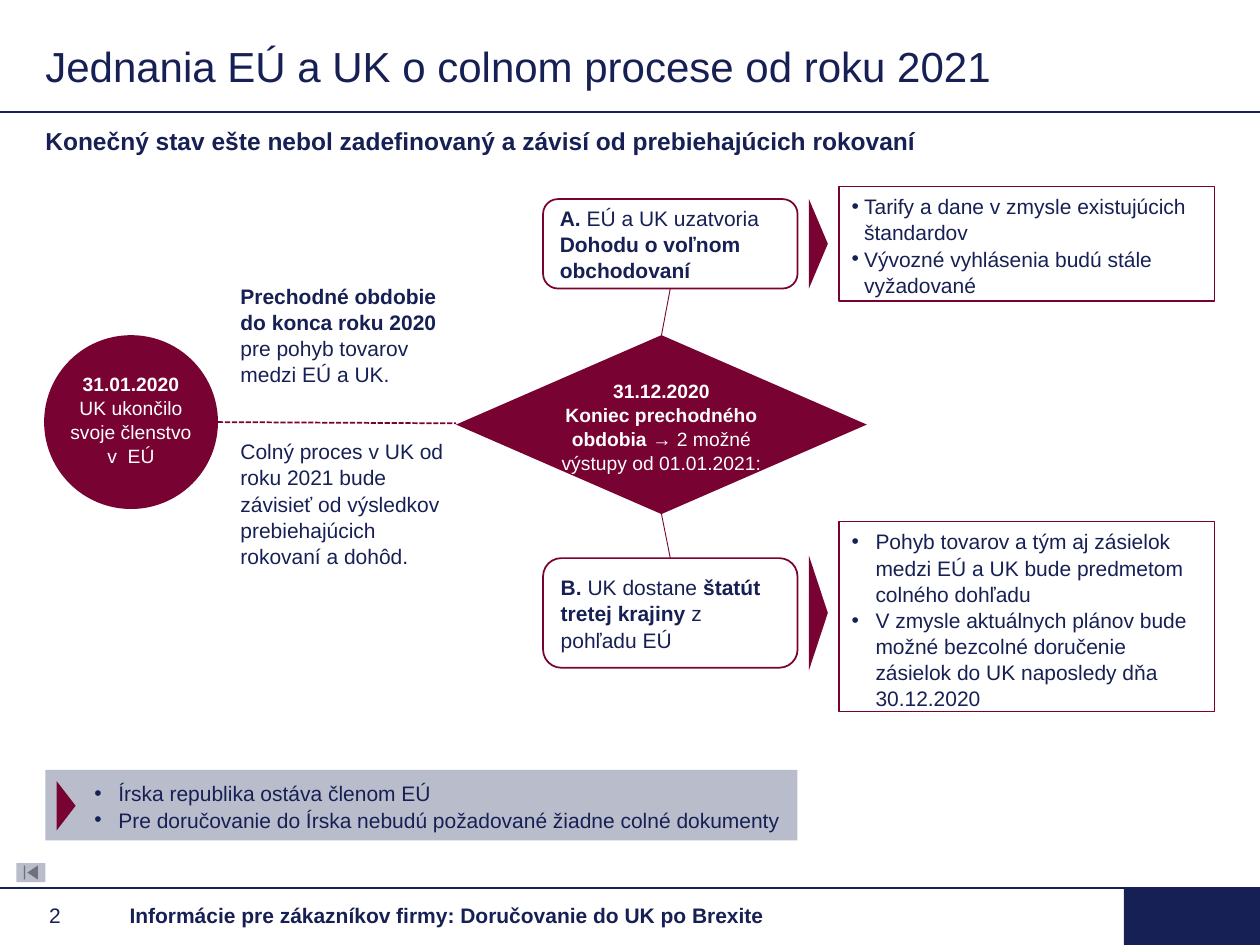
from pptx import Presentation
from pptx.dml.color import RGBColor
from pptx.enum.dml import MSO_LINE
from pptx.enum.shapes import MSO_CONNECTOR, MSO_SHAPE as Kind
from pptx.enum.text import MSO_ANCHOR as Anchor, PP_ALIGN as Align
from pptx.oxml.ns import qn
from pptx.util import Inches, Pt
from lxml.etree import SubElement

THEME = {
    "font": "Arial",
    "navy": RGBColor(0x17, 0x20, 0x54),
    "wine": RGBColor(0x78, 0x02, 0x32),
    "grey": RGBColor(0xB9, 0xBC, 0xCB),
    "white": RGBColor(0xFF, 0xFF, 0xFF),
    "title": Pt(24),
    "subtitle": Pt(14),
    "body": Pt(12),
    "node": Pt(11),
}

deck = Presentation()
deck.slide_width, deck.slide_height = Inches(10), Inches(7.5)
page = deck.slides.add_slide(deck.slide_layouts[6])


def draw(kind, place, fill=None, line=None, width=1, turn=0):
    shape = page.shapes.add_shape(kind, *map(Inches, place))
    shape.shadow.inherit = False
    shape.rotation = turn
    if fill:
        shape.fill.solid()
        shape.fill.fore_color.rgb = THEME[fill]
    else:
        shape.fill.background()
    if line:
        shape.line.color.rgb = THEME[line]
        shape.line.width = Pt(width)
    else:
        shape.line.fill.background()
    return shape


def write(shape, paras, size="body", color="navy", anchor=Anchor.TOP, align=Align.LEFT,
          insets=(0.1, 0.05, 0.1, 0.05), hang=0, gap=0):
    left, top, right, bottom = map(Inches, insets)
    frame_format = {
        "word_wrap": True, "vertical_anchor": anchor, "margin_left": left,
        "margin_top": top, "margin_right": right, "margin_bottom": bottom,
    }
    frame = shape.text_frame
    for name, value in frame_format.items():
        setattr(frame, name, value)
    for index, text in enumerate(paras):
        para = frame.add_paragraph() if index else frame.paragraphs[0]
        para.alignment = align
        para.line_spacing = 1.04
        if index and gap:
            para.space_before = Pt(gap)
        if hang:
            props = para._p.get_or_add_pPr()
            props.set("marL", str(Inches(hang)))
            props.set("indent", str(-Inches(hang)))
            SubElement(props, qn("a:buFont")).set("typeface", THEME["font"])
            SubElement(props, qn("a:buChar")).set("char", "•")
        for part, words in enumerate(text.split("*")):
            if not words:
                continue
            span = para.add_run()
            span.text = words
            span_format = {"name": THEME["font"], "size": THEME[size], "bold": part % 2 == 1}
            for name, value in span_format.items():
                setattr(span.font, name, value)
            span.font.color.rgb = THEME[color]


links = [
    ((0, 0.89), (10, 0.89), "navy", 1, None),
    ((0, 7.05), (10, 7.05), "navy", 1, None),
    ((5.32, 2.29), (5.25, 2.66), "wine", 0.5, None),
    ((5.25, 4.08), (5.32, 4.43), "wine", 0.5, None),
    ((1.73, 3.35), (3.62, 3.36), "wine", 1, MSO_LINE.SQUARE_DOT),
]
for start, end, color, width, dash in links:
    link = page.shapes.add_connector(MSO_CONNECTOR.STRAIGHT, *map(Inches, start + end))
    link.line.color.rgb = THEME[color]
    link.line.width = Pt(width)
    if dash:
        link.line.dash_style = dash
    SubElement(link._element.spPr, qn("a:effectLst"))

draw(Kind.RECTANGLE, (8.92, 7.05, 1.08, 0.45), "navy")

flush = (0, 0.05, 0.1, 0.05)
labels = [
    ((0.36, 0.28, 9.29, 0.47), ["Jednania EÚ a UK o colnom procese od roku 2021"],
     {"size": "title", "anchor": Anchor.MIDDLE, "insets": flush}),
    ((0.36, 0.94, 9.29, 0.25),
     ["*Konečný stav ešte nebol zadefinovaný a závisí od prebiehajúcich rokovaní*"],
     {"size": "subtitle", "insets": flush}),
    ((0.93, 7.13, 5.95, 0.25),
     ["*Informácie pre zákazníkov firmy: Doručovanie do UK po Brexite*"],
     {"anchor": Anchor.MIDDLE}),
    ((0.39, 7.13, 0.54, 0.25), ["2"], {"anchor": Anchor.MIDDLE, "insets": flush}),
    ((1.81, 2.19, 1.82, 2.32),
     ["*Prechodné obdobie do konca roku 2020* pre pohyb tovarov medzi EÚ a UK.",
      "Colný proces v UK od roku 2021 bude závisieť od výsledkov prebiehajúcich rokovaní a dohôd."],
     {"gap": 29}),
]
for place, paras, style in labels:
    write(page.shapes.add_textbox(*map(Inches, place)), paras, **style)

nodes = [
    (Kind.OVAL, (0.35, 2.66, 1.38, 1.38), (0, 0, 0, 0.04),
     ["*31.01.2020*", "UK ukončilo svoje členstvo v  EÚ"]),
    (Kind.FLOWCHART_DECISION, (3.62, 2.66, 3.26, 1.42), (0, 0.2, 0, 0.17),
     ["*31.12.2020*", "*Koniec prechodného obdobia *→ 2 možné výstupy od 01.01.2021:"]),
]
for kind, place, insets, paras in nodes:
    write(draw(kind, place, "wine"), paras, "node", "white", Anchor.MIDDLE, Align.CENTER, insets)

outcomes = [
    (1.58, 0.71, "*A. *EÚ a UK uzatvoria *Dohodu o voľnom obchodovaní*"),
    (4.43, 0.87, "*B. *UK dostane *štatút tretej krajiny *z pohľadu EÚ"),
]
for top, height, text in outcomes:
    box = draw(Kind.FLOWCHART_ALTERNATE_PROCESS, (4.31, top, 2.02, height), line="wine")
    write(box, [text], anchor=Anchor.MIDDLE)

effects = [
    (1.48, 0.91, 0.1, ["Tarify a dane v zmysle existujúcich štandardov",
                       "Vývozné vyhlásenia budú stále vyžadované"]),
    (4.14, 1.51, 0.19, ["Pohyb tovarov a tým aj zásielok medzi EÚ a UK bude predmetom colného dohľadu",
                        "V zmysle aktuálnych plánov bude možné bezcolné doručenie zásielok do UK "
                        "naposledy dňa 30.12.2020"]),
]
for top, height, hang, paras in effects:
    box = draw(Kind.RECTANGLE, (6.66, top, 2.98, height), line="wine", width=0.75)
    write(box, paras, hang=hang)

note = draw(Kind.RECTANGLE, (0.36, 6.11, 5.97, 0.56), "grey")
write(note, ["Írska republika ostáva členom EÚ",
             "Pre doručovanie do Írska nebudú požadované žiadne colné dokumenty"],
      insets=(0.39, 0.08, 0.1, 0.08), hang=0.19)

for left, top, length in [(6.14, 1.86, 0.71), (6.04, 4.79, 0.91), (0.33, 6.32, 0.39)]:
    draw(Kind.ISOSCELES_TRIANGLE, (left, top, length, 0.15), "wine", turn=90)

draw(Kind.ACTION_BUTTON_BEGINNING, (0.13, 6.85, 0.23, 0.15), "grey")

deck.save("out.pptx")
